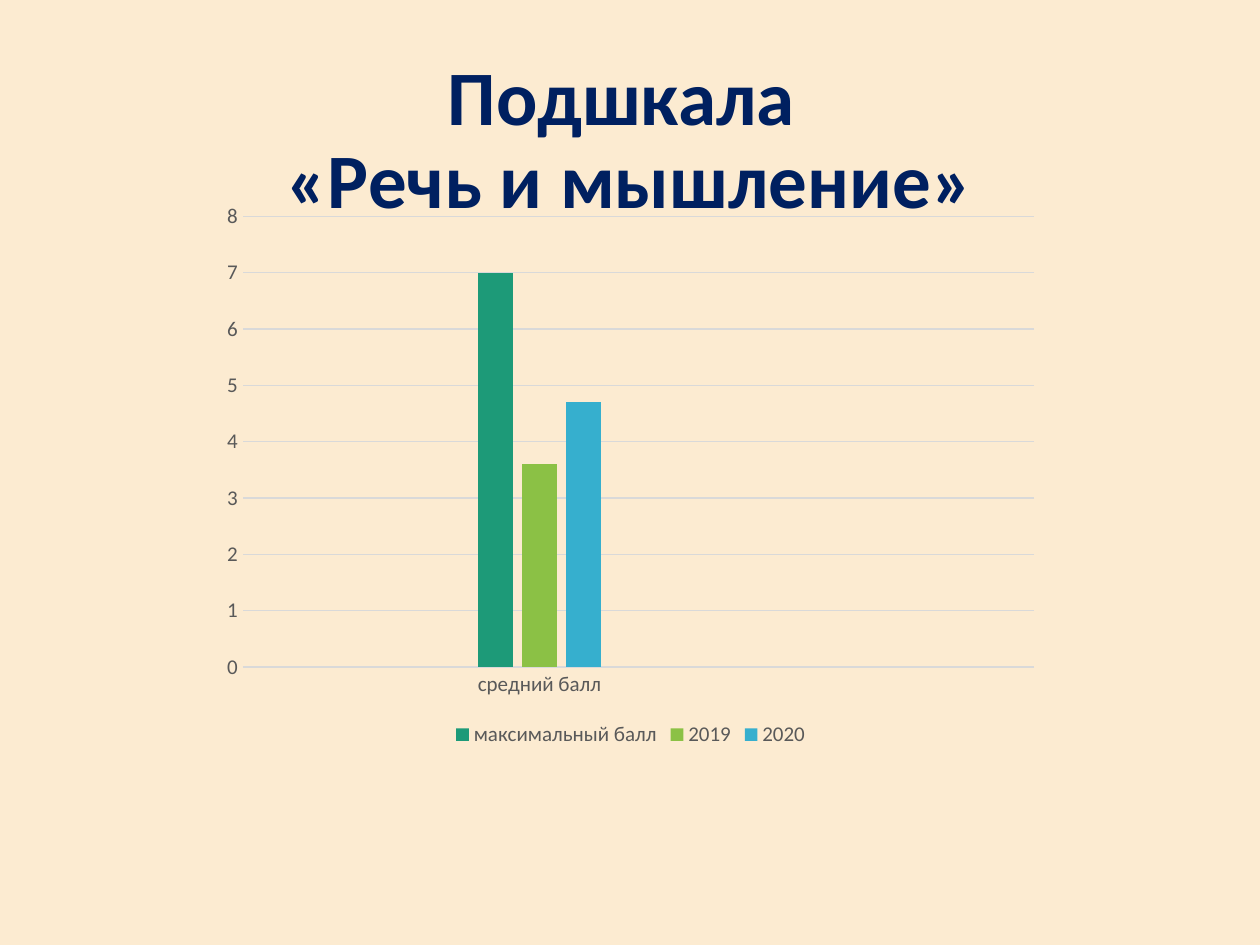
from pptx import Presentation
from pptx.chart.data import CategoryChartData
from pptx.dml.color import RGBColor
from pptx.enum.chart import XL_CHART_TYPE, XL_LEGEND_POSITION, XL_TICK_MARK
from pptx.enum.text import MSO_ANCHOR, PP_ALIGN
from pptx.util import Inches, Pt

CREAM = RGBColor(0xFC, 0xEB, 0xD1)
NAVY = RGBColor(0x00, 0x20, 0x60)
GRAY = RGBColor(0x59, 0x59, 0x59)
LIGHT_GRAY = RGBColor(0xD9, 0xD9, 0xD9)
GREEN = RGBColor(0x1D, 0x9A, 0x78)
LIME = RGBColor(0x8B, 0xC1, 0x45)
BLUE = RGBColor(0x36, 0xAF, 0xCE)

COLUMNS = XL_CHART_TYPE.COLUMN_CLUSTERED
BOTTOM = XL_LEGEND_POSITION.BOTTOM
NO_TICK = XL_TICK_MARK.NONE
MIDDLE = MSO_ANCHOR.MIDDLE
CENTER = PP_ALIGN.CENTER

FONT_NAME = "Calibri"
TITLE_ONLY = 5
CATEGORIES = ["", "средний балл", "", ""]
SCORES = [
    ("максимальный балл", 7, GREEN),
    ("2019", 3.6, LIME),
    ("2020", 4.7, BLUE),
]


def set_font(font, size, color, bold=False):
    """Apply the slide typeface with a size, colour and weight."""
    font.name = FONT_NAME
    font.size = Pt(size)
    font.bold = bold
    font.color.rgb = color


def set_line(line, color):
    """Give a chart line its colour and the common width."""
    line.color.rgb = color
    line.width = Pt(0.75)


def format_title(title, text):
    """Place the title placeholder and format its text."""
    title.left, title.top = Inches(0.69), Inches(0.4)
    title.width, title.height = Inches(8.62), Inches(1.45)
    frame = title.text_frame
    frame.text = text
    frame.word_wrap = True
    frame.vertical_anchor = MIDDLE
    para = frame.paragraphs[0]
    para.alignment = CENTER
    para.line_spacing = 0.9
    set_font(para.font, 44, NAVY, bold=True)


def format_axis(axis):
    """Remove tick marks and set the label font of an axis."""
    axis.major_tick_mark = NO_TICK
    axis.minor_tick_mark = NO_TICK
    set_font(axis.tick_labels.font, 12, GRAY)


def add_score_chart(slide):
    """Add the column chart that compares the scores."""
    data = CategoryChartData()
    data.categories = CATEGORIES
    for name, score, _ in SCORES:
        data.add_series(name, [None, score, None, None])
    chart = slide.shapes.add_chart(
        COLUMNS, Inches(1.67), Inches(1.53), Inches(6.67), Inches(4.44), data
    ).chart
    chart.has_title = False
    set_font(chart.font, 12, GRAY)

    chart.has_legend = True
    chart.legend.position = BOTTOM
    chart.legend.include_in_layout = False
    set_font(chart.legend.font, 12, GRAY)

    format_axis(chart.category_axis)
    set_line(chart.category_axis.format.line, LIGHT_GRAY)
    format_axis(chart.value_axis)
    chart.value_axis.format.line.fill.background()
    set_line(chart.value_axis.major_gridlines.format.line, LIGHT_GRAY)

    plot = chart.plots[0]
    plot.vary_by_categories = False
    plot.gap_width = 219
    plot.overlap = -27
    for series, (_, _, color) in zip(plot.series, SCORES):
        series.format.fill.solid()
        series.format.fill.fore_color.rgb = color


def main():
    """Build the slide and save the deck."""
    deck = Presentation()
    deck.slide_width, deck.slide_height = Inches(10), Inches(7.5)
    slide = deck.slides.add_slide(deck.slide_layouts[TITLE_ONLY])
    slide.background.fill.solid()
    slide.background.fill.fore_color.rgb = CREAM
    format_title(slide.shapes.title, "Подшкала \v«Речь и мышление»")
    add_score_chart(slide)
    deck.save("out.pptx")


if __name__ == "__main__":
    main()
